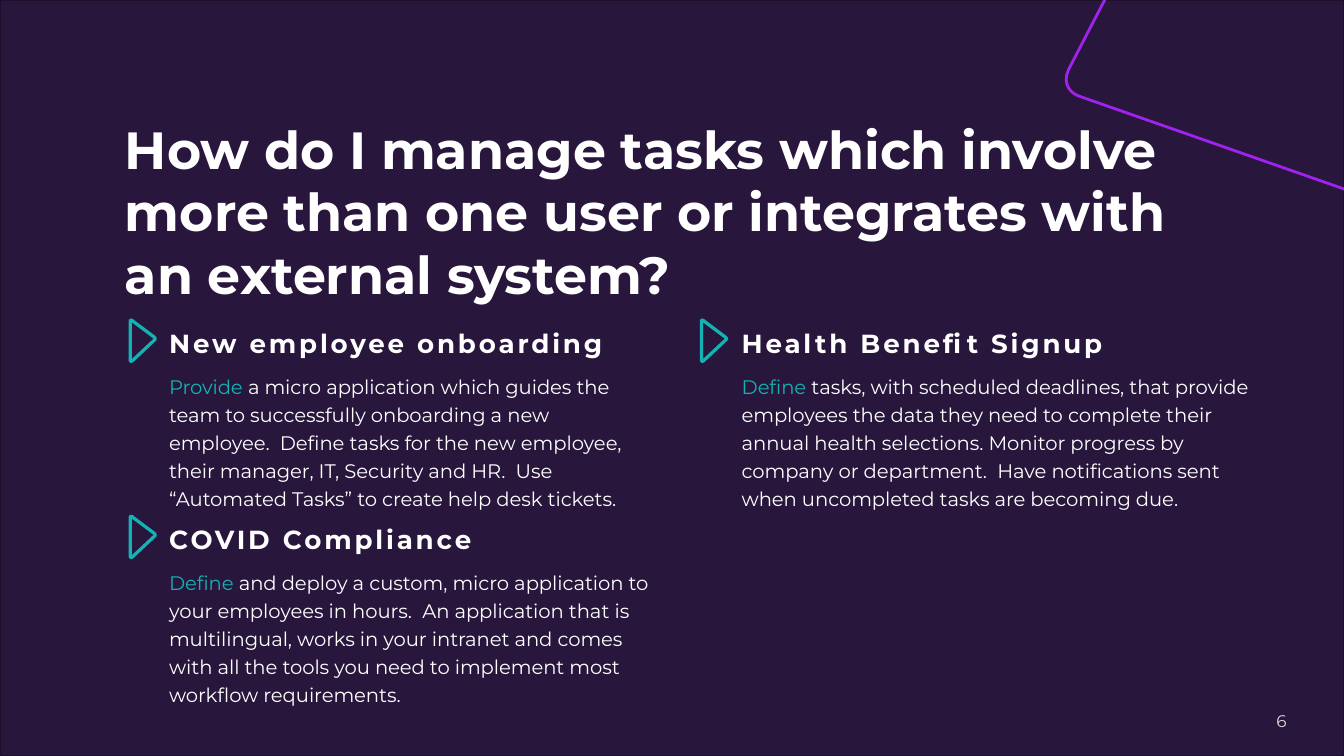
from pptx import Presentation
from pptx.dml.color import RGBColor
from pptx.enum.text import MSO_ANCHOR, MSO_AUTO_SIZE as FIT, PP_ALIGN
from pptx.enum.shapes import MSO_SHAPE
from pptx.util import Inches, Pt

COLORS = {
    "night": "28163C", "edge": "1E102C", "purple": "A023ED",
    "teal": "13B2B3", "white": "FFFFFF", "grey": "D9D9D9",
}


def add_span(para, text, size, color, bold=False, spacing=0):
    span = para.add_run()
    span.text = text
    for name, value in {"name": "Montserrat", "size": Pt(size), "bold": bold}.items():
        setattr(span.font, name, value)
    span.font.color.rgb = RGBColor.from_string(COLORS[color])
    if spacing:
        span.font._element.set("spc", str(int(spacing * 100)))


def add_outline(page, left, top, steps, color, width, close):
    """Draw points and cubic curves (three control points) given from left, top."""
    points = [steps[0]]
    for step in steps[1:]:
        if len(step) == 2:
            points.append(step)
            continue
        start = points[-1]
        for i in range(1, 9):
            t = i / 8
            weights = ((1 - t) ** 3, 3 * t * (1 - t) ** 2, 3 * t * t * (1 - t), t ** 3)
            points.append(tuple(sum(w * p[axis] for w, p in zip(weights, (start, *step)))
                                for axis in (0, 1)))
    places = [(Inches(left + x), Inches(top + y)) for x, y in points]
    builder = page.shapes.build_freeform(*places[0])
    builder.add_line_segments(places[1:], close=close)
    outline = builder.convert_to_shape()
    outline.shadow.inherit = False
    outline.fill.background()
    outline.line.color.rgb = RGBColor.from_string(COLORS[color])
    outline.line.width = Pt(width)


# Widescreen page, 16 to 9
deck = Presentation()
deck.slide_width = Inches(10)
deck.slide_height = deck.slide_width * 9 // 16
page = deck.slides.add_slide(deck.slide_layouts[5])

# Background with a thin edge
page.background.fill.solid()
page.background.fill.fore_color.rgb = RGBColor.from_string(COLORS["night"])
edge = page.shapes.add_shape(MSO_SHAPE.RECTANGLE, 0, 0, deck.slide_width, deck.slide_height)
edge.shadow.inherit = False
edge.fill.background()
edge.line.color.rgb = RGBColor.from_string(COLORS["edge"])
edge.line.width = Pt(1)

# Corner decoration
corner = [(8.23, -0.02), (7.95, 0.52), ((7.9, 0.63), (7.97, 0.7), (8.04, 0.72)), (10.01, 1.41)]
add_outline(page, 0, 0, corner, "purple", 1.5, close=False)

# Title
title = page.shapes.title
title.left, title.top, title.width, title.height = map(Inches, (0.85, 0.83, 8.13, 1.02))
title_format = {
    "margin_left": Inches(0.08), "margin_right": Inches(0.08),
    "margin_top": Inches(0.04), "margin_bottom": Inches(0.04),
    "vertical_anchor": MSO_ANCHOR.TOP, "word_wrap": True, "auto_size": FIT.SHAPE_TO_FIT_TEXT,
}
for name, value in title_format.items():
    setattr(title.text_frame, name, value)
para = title.text_frame.paragraphs[0]
para.alignment = PP_ALIGN.LEFT
add_span(para, "How do I manage tasks which involve more than one user or integrates "
         "with an external system?", 28, "white", bold=True)

# Use cases: left, top, width, icon left, heading, lead word, body
cases = [
    (1.16, 2.34, 3.76, 0.97, "New employee onboarding", "Provide\u00a0",
     "a micro application which guides the team to successfully onboarding a new employee.  "
     "Define tasks for the new employee, their manager, IT, Security and HR.  "
     "Use “Automated Tasks” to create help desk tickets."),
    (5.42, 2.34, 4.08, 5.22, "Health Benefit Signup", "Define ",
     "tasks, with scheduled deadlines, that provide employees the data they need to complete "
     "their annual health selections. Monitor progress by company or department.  "
     "Have notifications sent when uncompleted tasks are becoming due."),
    (1.16, 3.8, 3.84, 0.97, "COVID Compliance", "Define ",
     "and deploy a custom, micro application to your employees in hours.  An application that "
     "is multilingual, works in your intranet and comes with all the tools you need to "
     "implement most workflow requirements."),
]
triangle = [
    (0, 0.29), ((0, 0.3), (0.01, 0.3), (0.02, 0.29)),
    (0.18, 0.14), ((0.19, 0.13), (0.18, 0.12), (0.18, 0.12)),
    (0.02, 0), ((0.01, -0.01), (0, -0.01), (0, 0)),
]
for left, top, width, icon_left, heading, lead, body in cases:
    box = page.shapes.add_textbox(Inches(left), Inches(top), Inches(width), Inches(1.3))
    frame = box.text_frame
    frame.word_wrap = True
    frame.auto_size = FIT.SHAPE_TO_FIT_TEXT
    add_span(frame.paragraphs[0], heading, 14, "white", bold=True, spacing=1.5)
    para = frame.add_paragraph()
    add_span(para, lead, 10.5, "teal")
    add_span(para, body, 10.5, "white")
    for para in frame.paragraphs:
        para.line_spacing = 1.2
        para.space_after = Pt(6)
    add_outline(page, icon_left, top + 0.05, triangle, "teal", 1.75, close=True)

# Page number
number = page.shapes.add_textbox(Inches(7.42), Inches(5.21), Inches(2.25), Inches(0.3))
number.text_frame.word_wrap = True
number.text_frame.vertical_anchor = MSO_ANCHOR.MIDDLE
para = number.text_frame.paragraphs[0]
para.alignment = PP_ALIGN.RIGHT
add_span(para, "6", 9, "grey")

deck.save("out.pptx")
